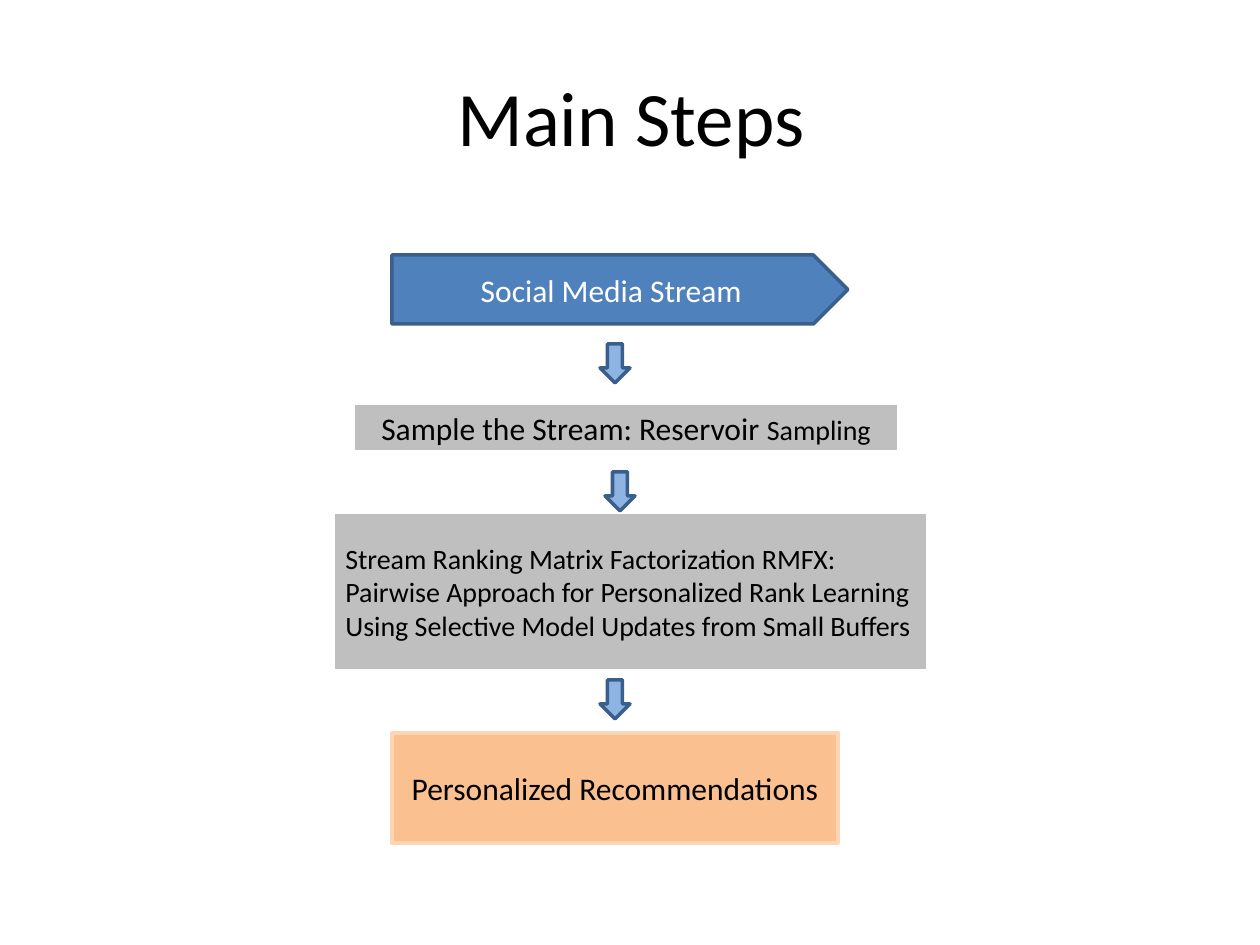
from pptx import Presentation
from pptx.dml.color import RGBColor
from pptx.enum.shapes import MSO_SHAPE
from pptx.enum.text import MSO_ANCHOR, PP_ALIGN
from pptx.util import Emu, Pt

SCALE = 914400 / 126
FONT = "Calibri"
BLACK = RGBColor(0x00, 0x00, 0x00)
WHITE = RGBColor(0xFF, 0xFF, 0xFF)
BLUE = RGBColor(0x4F, 0x81, 0xBD)
NAVY = RGBColor(0x3A, 0x5F, 0x8C)
SKY = RGBColor(0x8E, 0xB4, 0xE3)
GRAY = RGBColor(0xBF, 0xBF, 0xBF)
ORANGE = RGBColor(0xFA, 0xC0, 0x90)
PEACH = RGBColor(0xFC, 0xD5, 0xB5)

STEPS = [
    (MSO_SHAPE.PENTAGON, (392, 255, 456, 69), BLUE, NAVY, WHITE,
     PP_ALIGN.CENTER, [[("Social Media Stream", 18)]]),
    (MSO_SHAPE.RECTANGLE, (353, 403, 546, 49), GRAY, WHITE, BLACK,
     PP_ALIGN.CENTER, [[("Sample the Stream: Reservoir ", 18), ("Sampling", 16)]]),
    (MSO_SHAPE.RECTANGLE, (333, 512, 595, 159), GRAY, WHITE, BLACK,
     PP_ALIGN.LEFT, [[("Stream Ranking Matrix Factorization RMFX:", 16)],
                     [("Pairwise Approach for Personalized Rank Learning", 16)],
                     [("Using Selective Model Updates from Small Buffers", 16)]]),
    (MSO_SHAPE.RECTANGLE, (392, 733, 446, 110), ORANGE, PEACH, BLACK,
     PP_ALIGN.CENTER, [[("Personalized Recommendations", 18)]]),
]
ARROWS = [(600, 344), (605, 472), (600, 680)]


def px(*nums):
    """Turn px lengths into EMU."""
    return [Emu(round(num * SCALE)) for num in nums]


def write(frame, lines, color, align):
    """Fill a text frame with lines of (text, size) runs."""
    frame.word_wrap = True
    frame.vertical_anchor = MSO_ANCHOR.MIDDLE
    for i, line in enumerate(lines):
        para = frame.add_paragraph() if i else frame.paragraphs[0]
        para.alignment = align
        for text, size in line:
            run = para.add_run()
            run.text = text
            run.font.name = FONT
            run.font.size = Pt(size)
            run.font.color.rgb = color


def add_title(slide, box):
    """Place the heading in its box."""
    title = slide.shapes.add_textbox(*px(*box))
    write(title.text_frame, [[("Main Steps", 44)]], BLACK, PP_ALIGN.CENTER)


def add_block(slide, kind, box, fill, edge):
    """Place one filled and outlined shape."""
    block = slide.shapes.add_shape(kind, *px(*box))
    block.shadow.inherit = False
    block.fill.solid()
    block.fill.fore_color.rgb = fill
    block.line.color.rgb = edge
    block.line.width = Pt(2)
    return block


def add_flow(slide, box):
    """Place the steps and the arrows between them."""
    left, top = box[:2]
    for kind, (x, y, wide, high), fill, edge, ink, align, lines in STEPS:
        place = (left + x, top + y, wide, high)
        block = add_block(slide, kind, place, fill, edge)
        write(block.text_frame, lines, ink, align)
    for x, y in ARROWS:
        place = (left + x, top + y, 30, 39)
        add_block(slide, MSO_SHAPE.DOWN_ARROW, place, SKY, NAVY)


def main():
    """Build and save the slide."""
    deck = Presentation()
    deck.slide_width, deck.slide_height = px(1260, 945)
    slide = deck.slides.add_slide(deck.slide_layouts[6])
    add_title(slide, (64, 37, 1134, 158))
    add_flow(slide, (0, 0, 1260, 945))
    deck.save("out.pptx")


if __name__ == "__main__":
    main()
